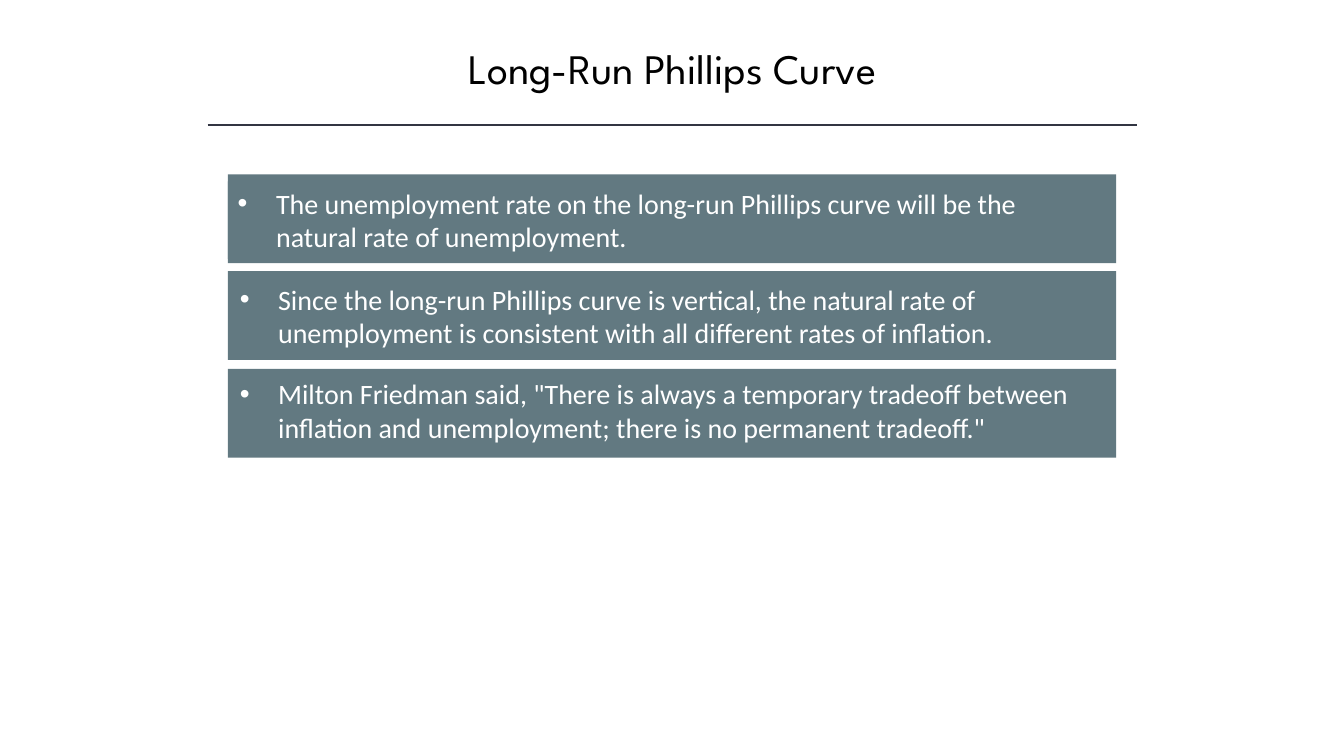
from dataclasses import dataclass

from lxml.etree import SubElement
from pptx import Presentation
from pptx.dml.color import RGBColor
from pptx.enum.shapes import MSO_CONNECTOR, MSO_SHAPE
from pptx.enum.text import MSO_ANCHOR, PP_ALIGN
from pptx.oxml.ns import qn
from pptx.util import Inches, Pt


@dataclass(frozen=True)
class Theme:
    title_color: RGBColor = RGBColor(0x00, 0x00, 0x00)
    rule_color: RGBColor = RGBColor(0x32, 0x35, 0x42)
    card_color: RGBColor = RGBColor(0x62, 0x79, 0x81)
    card_text_color: RGBColor = RGBColor(0xFF, 0xFF, 0xFF)
    title_font: str = "League Spartan"
    body_font: str = "Calibri"
    title_size: int = 30
    body_size: int = 20


theme = Theme()
deck = Presentation()
deck.slide_width, deck.slide_height = Inches(13.33), Inches(7.5)
page = deck.slides.add_slide(deck.slide_layouts[6])


def write(box, text, *, font, size, color, align=PP_ALIGN.LEFT, bullet=False):
    frame = box.text_frame
    frame.word_wrap = True
    frame.vertical_anchor = MSO_ANCHOR.TOP
    para = frame.paragraphs[0]
    para.alignment = align
    if bullet:
        properties = para._p.get_or_add_pPr()
        properties.set("marL", str(Inches(0.38)))
        properties.set("indent", str(-Inches(0.38)))
        SubElement(properties, qn("a:buFont")).set("typeface", "Arial")
        SubElement(properties, qn("a:buChar")).set("char", "•")
    span = para.add_run()
    span.text = text
    span.font.name = font
    span.font.size = Pt(size)
    span.font.color.rgb = color


def add_panel(left, top, width, height):
    panel = page.shapes.add_shape(
        MSO_SHAPE.RECTANGLE, Inches(left), Inches(top), Inches(width), Inches(height)
    )
    panel.shadow.inherit = False
    panel.fill.solid()
    panel.fill.fore_color.rgb = theme.card_color
    panel.line.fill.background()
    return panel


title = page.shapes.add_textbox(Inches(1.67), Inches(0.37), Inches(10), Inches(0.61))
write(title, "Long-Run Phillips Curve", font=theme.title_font, size=theme.title_size,
      color=theme.title_color, align=PP_ALIGN.CENTER)

rule = page.shapes.add_connector(
    MSO_CONNECTOR.STRAIGHT, Inches(2.06), Inches(1.24), Inches(11.28), Inches(1.24)
)
rule.line.color.rgb = theme.rule_color
rule.line.width = Pt(1)
SubElement(rule._element.spPr, qn("a:effectLst"))

cards = [
    (1.73, 2.26, 1.8, 8.54,
     "The unemployment rate on the long-run Phillips curve will be the "
     "natural rate of unemployment."),
    (2.69, 2.28, 2.75, 8.5,
     "Since the long-run Phillips curve is vertical, the natural rate of "
     "unemployment is consistent with all different rates of inflation."),
    (3.66, 2.28, 3.69, 8.78,
     'Milton Friedman said, "There is always a temporary tradeoff between '
     'inflation and unemployment; there is no permanent tradeoff."'),
]
for card_top, text_left, text_top, text_width, statement in cards:
    add_panel(2.26, card_top, 8.81, 0.88)
    box = add_panel(text_left, text_top, text_width, 0.77)
    write(box, statement, font=theme.body_font, size=theme.body_size,
          color=theme.card_text_color, bullet=True)

deck.save("out.pptx")
